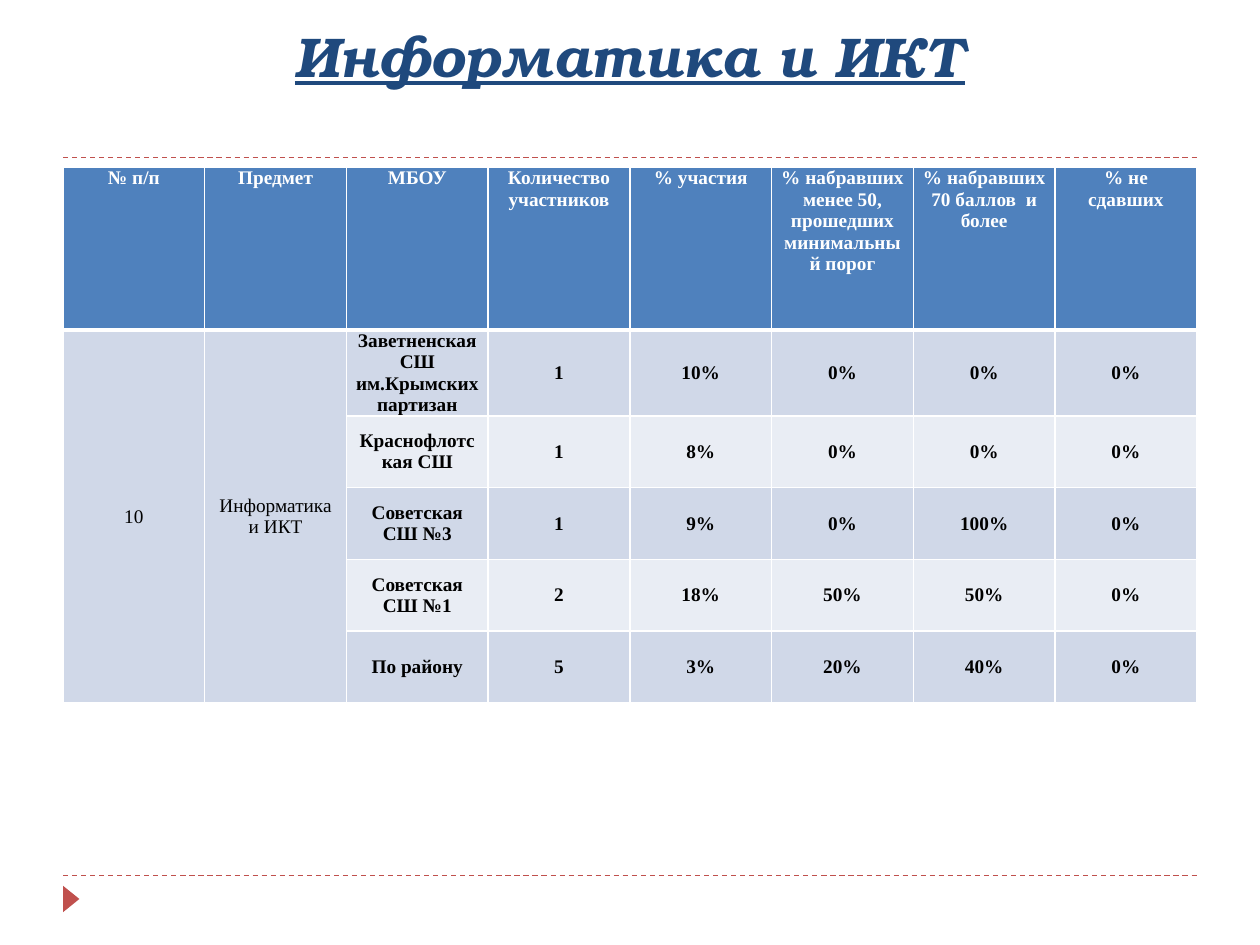
from lxml import etree
from pptx import Presentation
from pptx import util as u
from pptx.dml.color import RGBColor
from pptx.enum import dml, shapes, text
from pptx.oxml.ns import qn

COLORS = {
    "title": "1F497D",
    "accent": "C0504D",
    "header": "4F81BD",
    "band_dark": "D0D8E8",
    "band_light": "E9EDF4",
    "white": "FFFFFF",
    "black": "000000",
}
TITLE_FONT = "TeX Gyre Bonum"
TABLE_FONT = "Times New Roman"
LEFT, WIDTH = 0.5, 9
HEADER_HEIGHT, ROW_HEIGHT = 1.29, 0.57

HEADERS = [
    "№ п/п", "Предмет", "МБОУ", "Количество участников", "% участия",
    "% набравших менее 50, прошедших минимальный порог",
    "% набравших 70 баллов  и более", "% не сдавших",
]
SUBJECT = ["10", "Информатика и ИКТ"]
SCHOOLS = [
    ["Заветненская СШ им.Крымских партизан", "1", "10%", "0%", "0%", "0%"],
    ["Краснофлотская СШ", "1", "8%", "0%", "0%", "0%"],
    ["Советская СШ №3", "1", "9%", "0%", "100%", "0%"],
    ["Советская СШ №1", "2", "18%", "50%", "50%", "0%"],
    ["По району", "5", "3%", "20%", "40%", "0%"],
]


def color(name):
    return RGBColor.from_string(COLORS[name])


def add_text(frame, words, font, size, color_name, bold=True):
    para = frame.paragraphs[0]
    para.alignment = text.PP_ALIGN.CENTER
    span = para.add_run()
    span.text = words
    span.font.name = font
    span.font.size = u.Pt(size)
    span.font.bold = bold
    span.font.color.rgb = color(color_name)
    return span


def add_dashed_rule(page, top):
    rule = page.shapes.add_connector(
        shapes.MSO_CONNECTOR.STRAIGHT, u.Inches(LEFT), u.Inches(top),
        u.Inches(LEFT + WIDTH), u.Inches(top))
    rule.line.color.rgb = color("accent")
    rule.line.width = u.Pt(0.75)
    rule.line.dash_style = dml.MSO_LINE.DASH
    etree.SubElement(rule._element.spPr, qn("a:effectLst"))


def add_page_marker(page):
    marker = page.shapes.add_shape(
        shapes.MSO_SHAPE.ISOSCELES_TRIANGLE,
        u.Inches(0.46), u.Inches(7.07), u.Inches(0.21), u.Inches(0.13))
    marker.rotation = 90
    marker.shadow.inherit = False
    marker.fill.solid()
    marker.fill.fore_color.rgb = color("accent")
    marker.line.fill.background()


def set_title(page, words):
    title = page.shapes.title
    title.left, title.top = u.Inches(LEFT), u.Inches(0.17)
    title.width, title.height = u.Inches(WIDTH), u.Inches(1.08)
    frame = title.text_frame
    frame.vertical_anchor = text.MSO_ANCHOR.TOP
    frame.margin_top = 0
    span = add_text(frame, words, TITLE_FONT, 32, "title")
    span.font.italic = True
    span.font.underline = True


def set_borders(cell, bottom_width):
    properties = cell._tc.get_or_add_tcPr()
    widths = {"a:lnL": 1, "a:lnR": 1, "a:lnT": 1, "a:lnB": bottom_width}
    for index, (tag, width) in enumerate(widths.items()):
        border = etree.Element(qn(tag), w=str(u.Pt(width)))
        fill = etree.SubElement(border, qn("a:solidFill"))
        etree.SubElement(fill, qn("a:srgbClr"), val=COLORS["white"])
        properties.insert(index, border)


def style_cell(cell, fill_name, bottom_width=1):
    cell.fill.solid()
    cell.fill.fore_color.rgb = color(fill_name)
    cell.margin_left = cell.margin_right = u.Inches(0.07)
    cell.margin_top = cell.margin_bottom = 0
    set_borders(cell, bottom_width)


def add_results_table(page):
    row_count, column_count = len(SCHOOLS) + 1, len(HEADERS)
    height = HEADER_HEIGHT + ROW_HEIGHT * len(SCHOOLS)
    table = page.shapes.add_table(
        row_count, column_count, u.Inches(LEFT), u.Inches(1.33),
        u.Inches(WIDTH), u.Inches(height)).table
    for column in table.columns:
        column.width = u.Inches(WIDTH / column_count)
    for index, row in enumerate(table.rows):
        row.height = u.Inches(ROW_HEIGHT if index else HEADER_HEIGHT)

    # Header row
    for column, words in enumerate(HEADERS):
        cell = table.cell(0, column)
        style_cell(cell, "header", bottom_width=3)
        add_text(cell.text_frame, words, TABLE_FONT, 11, "white")

    # Banded school rows; the subject cells span all of them
    for row, school in enumerate(SCHOOLS, start=1):
        band = "band_dark" if row % 2 else "band_light"
        subject = SUBJECT if row == 1 else [""] * len(SUBJECT)
        for column, words in enumerate(subject + school):
            cell = table.cell(row, column)
            in_subject = column < len(SUBJECT)
            style_cell(cell, "band_dark" if in_subject else band)
            cell.vertical_anchor = text.MSO_ANCHOR.MIDDLE
            if words:
                add_text(cell.text_frame, words, TABLE_FONT, 11, "black",
                         bold=not in_subject)
    for column in range(len(SUBJECT)):
        table.cell(1, column).merge(table.cell(row_count - 1, column))


def main():
    deck = Presentation()
    deck.slide_width, deck.slide_height = u.Inches(10), u.Inches(7.5)
    page = deck.slides.add_slide(deck.slide_layouts[5])
    page.background.fill.solid()
    page.background.fill.fore_color.rgb = color("white")

    # Frame of the page
    for top in (6.95, 1.25):
        add_dashed_rule(page, top)
    add_page_marker(page)

    # Content
    set_title(page, "Информатика и ИКТ")
    add_results_table(page)
    deck.save("out.pptx")


if __name__ == "__main__":
    main()
